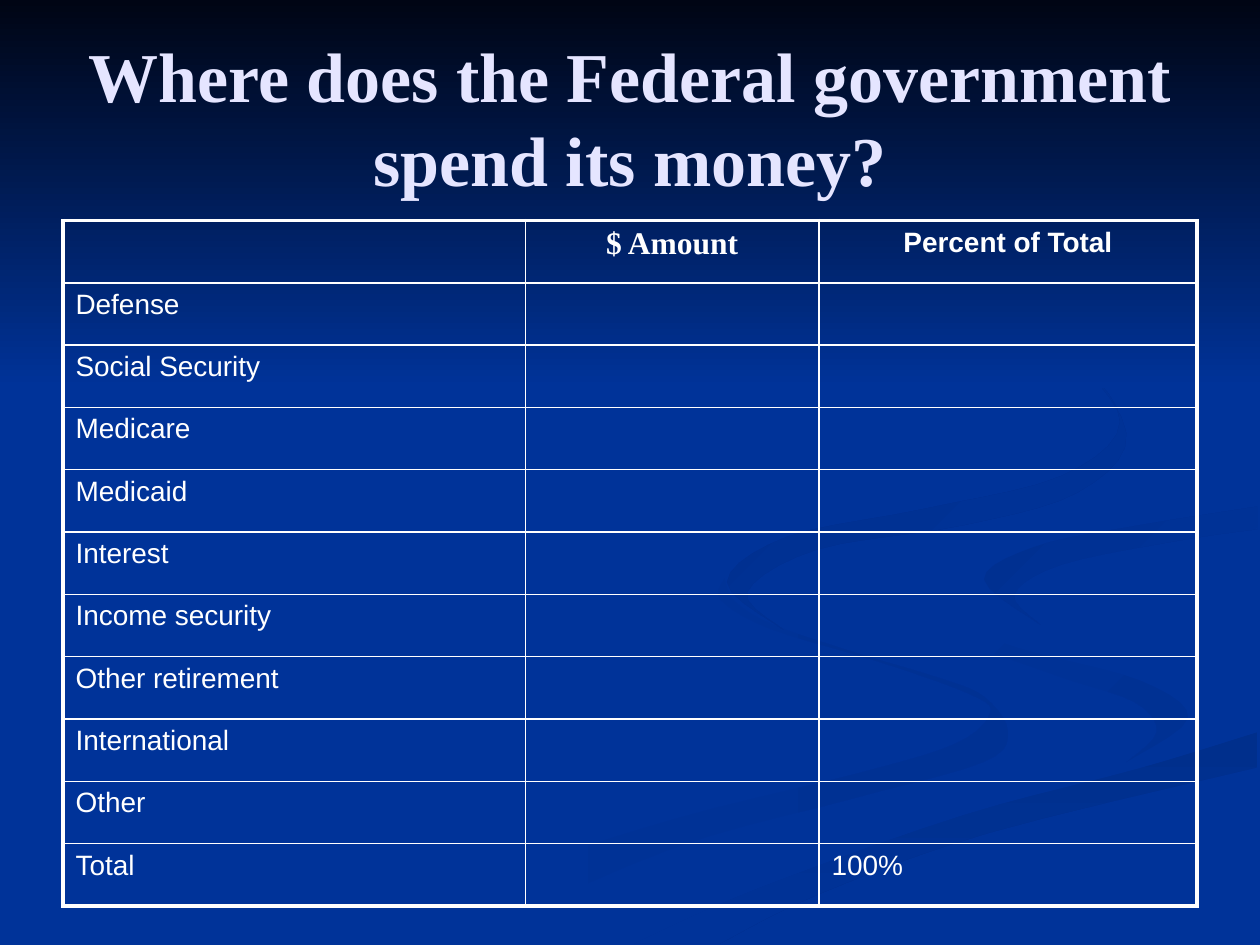
from lxml import etree
from pptx import Presentation
from pptx.dml.color import RGBColor
from pptx.enum.text import MSO_ANCHOR, PP_ALIGN
from pptx.oxml.ns import qn
from pptx.util import Inches, Pt

CENTER, LEFT = PP_ALIGN.CENTER, PP_ALIGN.LEFT
MIDDLE = MSO_ANCHOR.MIDDLE
BLUE, WHITE, LAVENDER = "003399", "FFFFFF", "E5E5FF"
SERIF, SANS = "Times New Roman", "Arial"
THIN, THICK = 1, 2.25
STEPS_PER_SPAN = 5

COLUMN_WIDTHS = [3.67, 2.33, 3]
HEADINGS = ["", "$ Amount", "Percent of Total"]
CATEGORIES = ["Defense", "Social Security", "Medicare", "Medicaid", "Interest",
              "Income security", "Other retirement", "International", "Other"]
BUDGET = [HEADINGS, *([name, "", ""] for name in CATEGORIES), ["Total", "", "100%"]]


def color(hex_value):
    return RGBColor.from_string(hex_value)


def spline(a, b, c, d, t):
    return (2 * b + (c - a) * t + (2 * a - 5 * b + 4 * c - d) * t ** 2
            + (3 * b - a - 3 * c + d) * t ** 3) / 2


def smooth(knots):
    padded = [knots[0], *knots, knots[-1]]
    curve = []
    for span in zip(padded, padded[1:], padded[2:], padded[3:]):
        xs, ys = zip(*span)
        for step in range(STEPS_PER_SPAN):
            t = step / STEPS_PER_SPAN
            curve.append((spline(*xs, t), spline(*ys, t)))
    return curve + [knots[-1]]


def between(first_edge, second_edge):
    return smooth(first_edge) + smooth(second_edge)[::-1]


def add_gradient_shape(slide, outline, start, end, angle):
    corners = [(Inches(x), Inches(y)) for x, y in outline]
    builder = slide.shapes.build_freeform(*corners[0])
    builder.add_line_segments(corners[1:])
    shape = builder.convert_to_shape()
    shape.shadow.inherit = False
    shape.line.fill.background()
    shape.fill.gradient()
    shape.fill.gradient_angle = 360 - angle
    for stop, hex_value in zip(shape.fill.gradient_stops, (start, end)):
        stop.color.rgb = color(hex_value)


def add_backdrop(slide):
    left_outer = [(5.75, 4.59), (5.83, 4.77), (6.14, 4.96), (6.82, 5.19), (7.45, 5.38),
                  (7.81, 5.53), (8, 5.81), (7.8, 6.05), (6.76, 6.34), (5.32, 6.74), (3.61, 7.49)]
    left_inner = [(5.75, 4.59), (5.72, 4.76), (6.11, 4.99), (6.97, 5.25), (7.7, 5.51),
                  (7.86, 5.66), (7.59, 5.9), (6.84, 6.13), (5.39, 6.49), (4.17, 6.9), (3, 7.49)]
    loop_outer = [(7.24, 4.64), (7.45, 4.9), (8.11, 5.15), (9.05, 5.4), (9.43, 5.7), (8.94, 6.05)]
    loop_inner = [(7.24, 4.64), (7.46, 5), (8.38, 5.36), (9, 5.57), (9.18, 5.81), (8.94, 6.05)]
    sweep_top = [(5.03, 7.49), (5.99, 7.06), (7.64, 6.47), (9.03, 6.1), (9.98, 5.81)]
    sweep_bottom = [(5.71, 7.49), (6.49, 7.1), (7.85, 6.61), (9.98, 6.09)]
    curl_outer = [(8.26, 4.96), (7.81, 4.6), (8.21, 4.34), (8.98, 4.18), (9.98, 4.02)]
    curl_inner = [(8.26, 4.96), (8.05, 4.72), (8.43, 4.48), (9.36, 4.29), (9.98, 4.2)]
    upper_outer = [(7.62, 2.33), (8.43, 2.75), (8.94, 3.44), (8.55, 3.91), (7.64, 4.17),
                   (6.49, 4.36), (5.93, 4.7), (6.22, 5)]
    upper_inner = [(7.62, 2.33), (8.46, 2.79), (8.89, 3.35), (8.42, 3.78), (7.33, 4.04),
                   (6.25, 4.26), (5.77, 4.62), (6.22, 5)]
    band_start = [(9.98, 3.87), (8.74, 4.08), (7.7, 4.27), (7.24, 4.64)]
    band_end = [(8.94, 6.05), (7.43, 6.43), (6.19, 6.84), (4.77, 7.49)]
    band_return = [(9.98, 5.38), (9.04, 5.19), (8.26, 4.96)]
    band_edges = (band_start, loop_outer, band_end, sweep_top, band_return, curl_outer)
    band = [point for edge in band_edges for point in smooth(edge)]
    top_shade = [(0, 0), (0, 3.08), (10, 3.08), (10, 0)]

    for outline, start, end, angle in [
        (between(left_outer, left_inner), BLUE, "003193", 0),
        (between(loop_outer, loop_inner), BLUE, "003193", 45),
        (between(sweep_top, sweep_bottom), "002F8C", BLUE, 90),
        (band, BLUE, BLUE, 0),
        (between(curl_outer, curl_inner), "003091", BLUE, 45),
        (between(upper_outer, upper_inner), "002F8E", BLUE, 45),
        (top_shade, "000514", BLUE, 90),
    ]:
        add_gradient_shape(slide, outline, start, end, angle)


def write(frame, text, size, font, hex_value, bold, align):
    frame.text = text
    paragraph = frame.paragraphs[0]
    paragraph.alignment = align
    for run in paragraph.runs:
        run.font.size = Pt(size)
        run.font.name = font
        run.font.bold = bold
        run.font.color.rgb = color(hex_value)


def add_title(slide, text):
    title = slide.shapes.add_textbox(Inches(0.5), Inches(0.3), Inches(9), Inches(1.25))
    title.text_frame.word_wrap = True
    title.text_frame.vertical_anchor = MIDDLE
    write(title.text_frame, text, 40, SERIF, LAVENDER, True, CENTER)


def set_borders(cell, widths):
    properties = cell._tc.get_or_add_tcPr()
    for side, width in widths.items():
        border = etree.SubElement(properties, qn(f"a:ln{side}"), w=str(Pt(width)))
        fill = etree.SubElement(border, qn("a:solidFill"))
        etree.SubElement(fill, qn("a:srgbClr"), val=WHITE)


def add_budget_table(slide):
    last_row, last_column = len(BUDGET) - 1, len(HEADINGS) - 1
    table = slide.shapes.add_table(len(BUDGET), len(HEADINGS), Inches(0.5),
                                   Inches(1.75), Inches(9), Inches(5.44)).table
    table.first_row = table.horz_banding = False
    for column, width in zip(table.columns, COLUMN_WIDTHS):
        column.width = Inches(width)
    for r, entries in enumerate(BUDGET):
        is_heading = r == 0
        for c, entry in enumerate(entries):
            cell = table.cell(r, c)
            outer = {"L": c == 0, "R": c == last_column, "T": is_heading, "B": r == last_row}
            set_borders(cell, {side: THICK if edge else THIN for side, edge in outer.items()})
            cell.fill.background()
            size, font = (18, SERIF) if entry == "$ Amount" else (16, SANS)
            write(cell.text_frame, entry, size, font, WHITE, is_heading,
                  CENTER if is_heading else LEFT)


def main():
    deck = Presentation()
    deck.slide_width, deck.slide_height = Inches(10), Inches(7.5)
    slide = deck.slides.add_slide(deck.slide_layouts[6])
    slide.background.fill.solid()
    slide.background.fill.fore_color.rgb = color(BLUE)
    add_backdrop(slide)
    add_title(slide, "Where does the Federal government spend its money?")
    add_budget_table(slide)
    deck.save("out.pptx")


if __name__ == "__main__":
    main()
